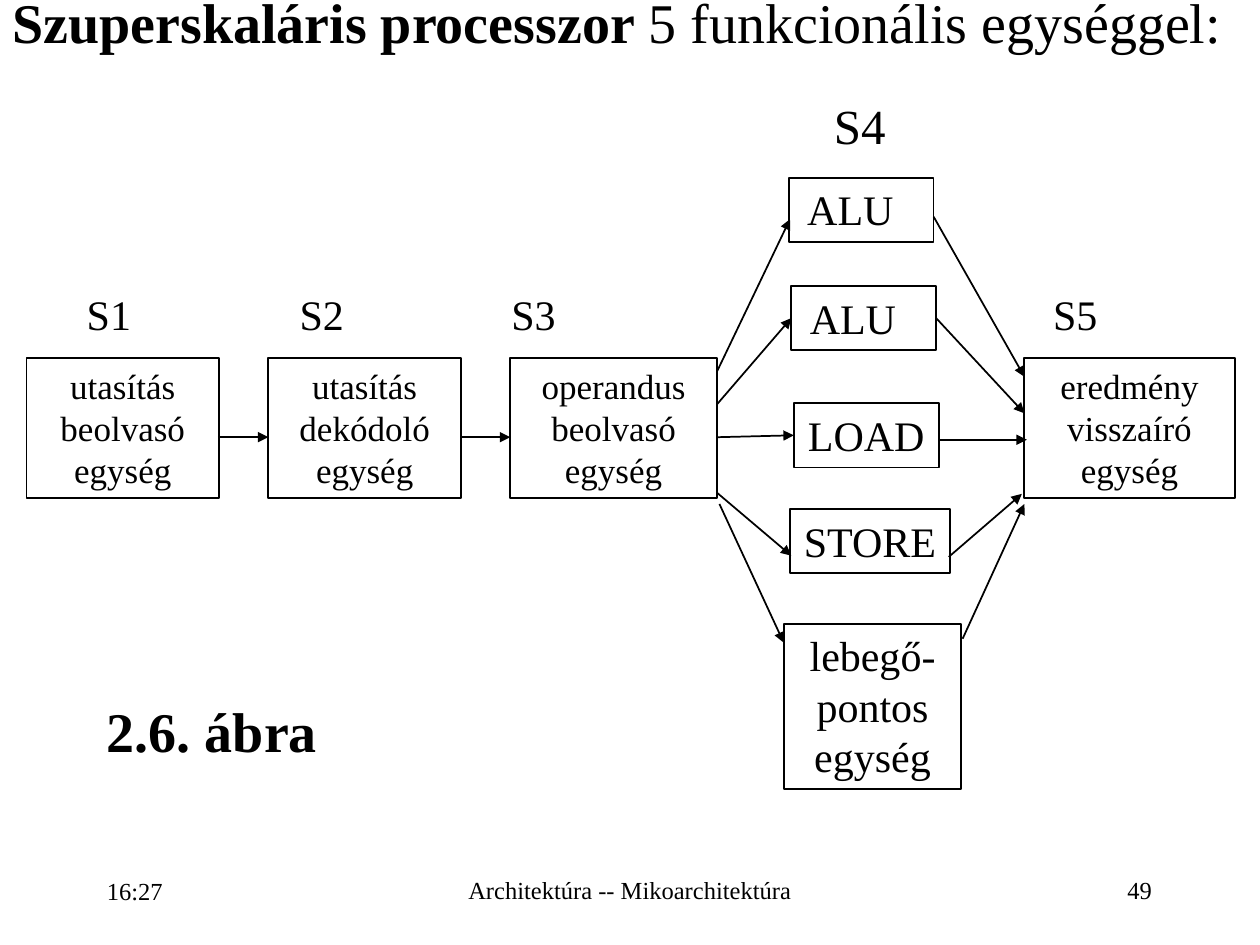
import dataclasses
import typing

import pptx
import pptx.dml.color
import pptx.enum.dml
import pptx.enum.shapes
import pptx.enum.text
import pptx.oxml
import pptx.oxml.ns
import pptx.util
from pptx.util import Inches

ALIGN = pptx.enum.text.PP_ALIGN
ANCHOR = pptx.enum.text.MSO_ANCHOR


@dataclasses.dataclass(frozen=True)
class Theme:
    font: str = "Times New Roman"
    ink: pptx.dml.color.RGBColor = pptx.dml.color.RGBColor(0, 0, 0)
    heading: int = 32
    stage_title: int = 28
    unit: int = 24
    stage: int = 20
    footer: int = 14
    line_width: float = 1


THEME = Theme()


@dataclasses.dataclass(frozen=True)
class Label:
    text: str
    left: float
    top: float
    width: float
    height: float
    size: int
    bold: bool = False
    align: ALIGN = ALIGN.LEFT
    anchor: ANCHOR = ANCHOR.TOP
    line_spacing: float = 1.0


@dataclasses.dataclass(frozen=True)
class Unit:
    text: str
    left: float
    top: float
    width: float
    height: float
    size: int = THEME.unit
    right_inset: float = 0.1


@dataclasses.dataclass(frozen=True)
class Arrow:
    """A flow arrow; source and target name units joined at a side's middle."""
    start: tuple[float, float]
    end: tuple[float, float]
    source: typing.Optional[str] = None
    target: typing.Optional[str] = None


STAGE_TOP, STAGE_HEIGHT, FLOW_Y = 2.84, 1.11, 3.47
UNITS = {
    "fetch": Unit("utasítás beolvasó egység", 0.21, STAGE_TOP, 1.53, STAGE_HEIGHT, THEME.stage),
    "decode": Unit("utasítás dekódoló egység", 2.13, STAGE_TOP, 1.53, STAGE_HEIGHT, THEME.stage),
    "operand": Unit("operandus beolvasó egység", 4.05, STAGE_TOP, 1.64, STAGE_HEIGHT, THEME.stage),
    "write_back": Unit("eredmény visszaíró egység", 8.13, STAGE_TOP, 1.67, STAGE_HEIGHT, THEME.stage),
    "alu_1": Unit("ALU", 6.26, 1.41, 1.15, 0.51, right_inset=0.27),
    "alu_2": Unit("ALU", 6.28, 2.27, 1.15, 0.51, right_inset=0.27),
    "load": Unit("LOAD", 6.3, 3.2, 1.15, 0.51),
    "store": Unit("STORE", 6.27, 4.04, 1.27, 0.51),
    "float": Unit("lebegő-pontos egység", 6.22, 4.95, 1.41, 1.31),
}

ARROWS = [
    Arrow((1.73, FLOW_Y), (2.13, FLOW_Y)),
    Arrow((3.66, FLOW_Y), (4.05, FLOW_Y)),
    Arrow((5.69, 2.95), (6.27, 1.74)),
    Arrow((5.69, 3.21), (6.28, 2.51), target="alu_2"),
    Arrow((5.7, FLOW_Y), (6.3, FLOW_Y), target="load"),
    Arrow((5.69, 3.91), (6.28, 4.41)),
    Arrow((5.71, 4), (6.22, 5.1)),
    Arrow((7.41, 1.72), (8.13, 2.99)),
    Arrow((7.43, 2.52), (8.13, 3.28), source="alu_2"),
    Arrow((7.46, 3.49), (8.15, 3.49)),
    Arrow((7.53, 4.42), (8.11, 3.92)),
    Arrow((7.64, 5.07), (8.13, 4)),
]

STAGE_LABELS = [
    Label(name, left, 2.24, 0.7, 0.51, THEME.unit)
    for name, left in (("S1", 0.59), ("S2", 2.28), ("S3", 3.96), ("S5", 8.26))
]
LABELS = STAGE_LABELS + [
    Label("S4", 6.52, 0.71, 0.81, 0.57, THEME.stage_title),
    Label("2.6. ábra", 0.75, 5.48, 2.04, 0.63, THEME.heading, bold=True),
    Label("16:27", 0.75, 6.81, 2.07, 0.54, THEME.footer,
          anchor=ANCHOR.MIDDLE, line_spacing=0.93),
    Label("Architektúra -- Mikoarchitektúra", 3.42, 6.83, 3.16, 0.49, THEME.footer,
          align=ALIGN.CENTER, anchor=ANCHOR.MIDDLE, line_spacing=0.93),
    Label("49", 7.17, 6.83, 2.07, 0.49, THEME.footer,
          align=ALIGN.RIGHT, anchor=ANCHOR.MIDDLE, line_spacing=0.93),
]
TITLE = Label("Szuperskaláris processzor ", 0, 0, 10, 0.92, THEME.heading,
              bold=True, line_spacing=0.69)
TITLE_REST = "5 funkcionális egységgel:"


def style_run(run, size: int, bold: bool = False) -> None:
    run.font.name = THEME.font
    run.font.size = pptx.util.Pt(size)
    run.font.bold = bold
    run.font.color.rgb = THEME.ink


def bounds(part: Label | Unit) -> list[pptx.util.Length]:
    return [Inches(value) for value in (part.left, part.top, part.width, part.height)]


def add_label(slide, label: Label):
    """Add a text box and return its only paragraph."""
    frame = slide.shapes.add_textbox(*bounds(label)).text_frame
    frame.word_wrap = True
    frame.vertical_anchor = label.anchor
    paragraph = frame.paragraphs[0]
    paragraph.text = label.text
    paragraph.alignment = label.align
    paragraph.line_spacing = label.line_spacing
    style_run(paragraph.runs[0], label.size, label.bold)
    return paragraph


def add_title(slide) -> None:
    paragraph = add_label(slide, TITLE)
    paragraph.space_before = pptx.util.Pt(8)
    rest = paragraph.add_run()
    rest.text = TITLE_REST
    style_run(rest, TITLE.size)


def add_unit(slide, unit: Unit):
    box = slide.shapes.add_shape(pptx.enum.shapes.MSO_SHAPE.RECTANGLE, *bounds(unit))
    box.shadow.inherit = False
    box.fill.background()
    box.line.color.rgb = THEME.ink
    box.line.width = pptx.util.Pt(THEME.line_width)
    frame = box.text_frame
    frame.word_wrap = True
    frame.vertical_anchor = ANCHOR.TOP
    frame.margin_right = Inches(unit.right_inset)
    frame.text = unit.text
    frame.paragraphs[0].alignment = ALIGN.CENTER
    style_run(frame.paragraphs[0].runs[0], unit.size)
    return box


def add_arrow(slide, arrow: Arrow, boxes: dict) -> None:
    ends = [Inches(value) for value in (*arrow.start, *arrow.end)]
    connector = slide.shapes.add_connector(pptx.enum.shapes.MSO_CONNECTOR.STRAIGHT, *ends)
    if arrow.source:
        connector.begin_connect(boxes[arrow.source], 3)
    if arrow.target:
        connector.end_connect(boxes[arrow.target], 1)
    connector.line.color.rgb = THEME.ink
    connector.line.width = pptx.util.Pt(THEME.line_width)
    properties = connector.line._get_or_add_ln()
    head = pptx.oxml.parse_xml(f'<a:tailEnd {pptx.oxml.ns.nsdecls("a")} type="triangle"/>')
    properties.append(head)
    no_effects = pptx.oxml.parse_xml(f'<a:effectLst {pptx.oxml.ns.nsdecls("a")}/>')
    properties.addnext(no_effects)


def main() -> None:
    deck = pptx.Presentation()
    deck.slide_width, deck.slide_height = Inches(10), Inches(7.5)
    slide = deck.slides.add_slide(deck.slide_layouts[6])
    add_title(slide)
    boxes = {name: add_unit(slide, unit) for name, unit in UNITS.items()}
    for arrow in ARROWS:
        add_arrow(slide, arrow, boxes)
    for label in LABELS:
        add_label(slide, label)
    deck.save("out.pptx")


if __name__ == "__main__":
    main()
